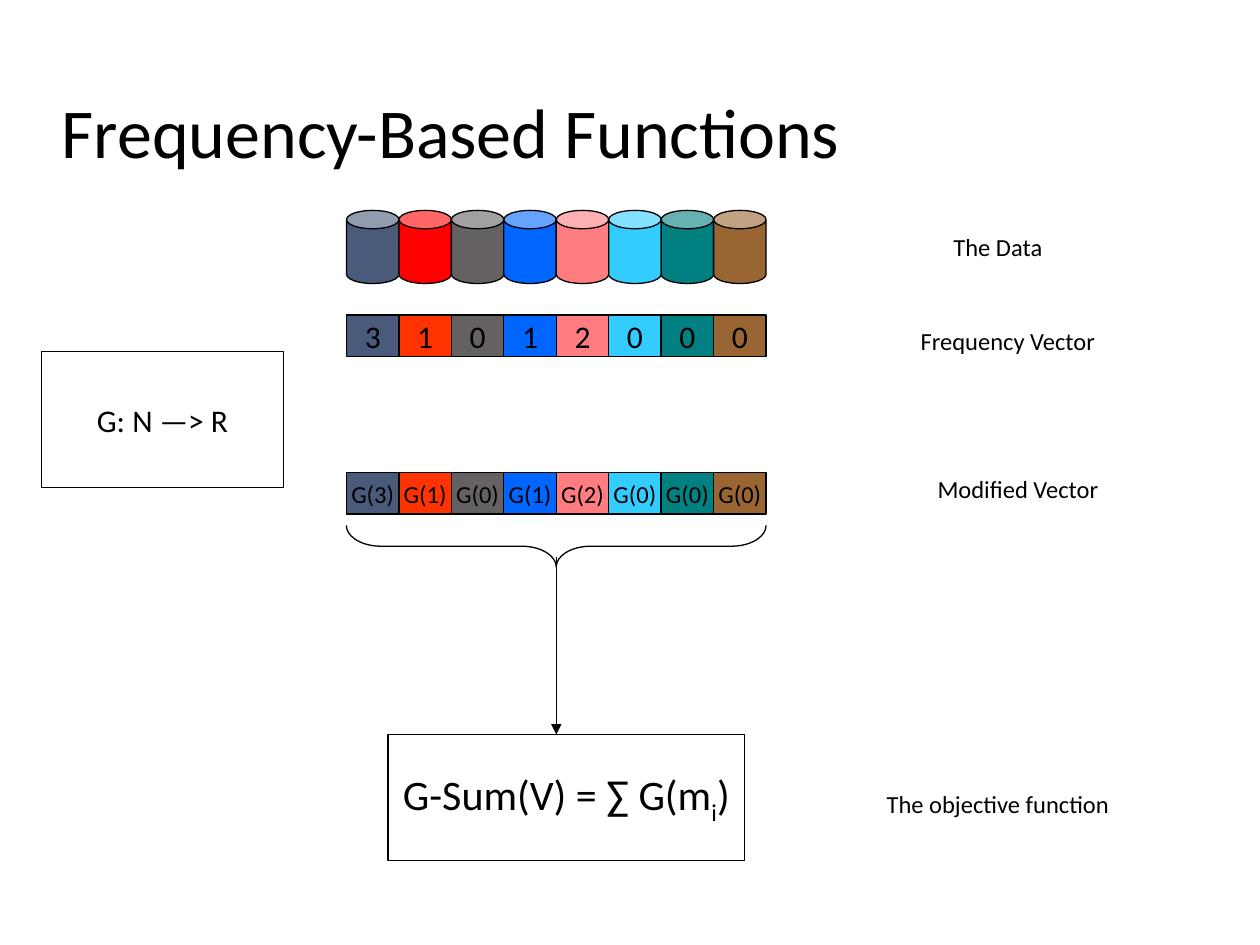
from pptx import Presentation
from pptx.dml.color import RGBColor
from pptx.enum.shapes import MSO_CONNECTOR, MSO_SHAPE
from pptx.enum.text import MSO_ANCHOR, MSO_AUTO_SIZE, PP_ALIGN
from pptx.oxml.ns import qn
from pptx.util import Inches, Pt
from lxml.etree import SubElement

FONT = "Calibri"
BLACK = RGBColor(0x00, 0x00, 0x00)
WHITE = RGBColor(0xFF, 0xFF, 0xFF)
SLATE = RGBColor(0x4A, 0x5A, 0x7A)
RED = RGBColor(0xFF, 0x00, 0x00)
ORANGE_RED = RGBColor(0xFF, 0x33, 0x00)
GRAY = RGBColor(0x65, 0x61, 0x62)
BLUE = RGBColor(0x00, 0x66, 0xFF)
PINK = RGBColor(0xFF, 0x7C, 0x80)
SKY = RGBColor(0x33, 0xCC, 0xFF)
TEAL = RGBColor(0x00, 0x80, 0x80)
BROWN = RGBColor(0x99, 0x66, 0x33)

CAN_COLORS = [SLATE, RED, GRAY, BLUE, PINK, SKY, TEAL, BROWN]
CELL_COLORS = [SLATE, ORANGE_RED, GRAY, BLUE, PINK, SKY, TEAL, BROWN]
FREQUENCIES = [3, 1, 0, 1, 2, 0, 0, 0]

ROW_LEFT = Inches(2.75)
ROW_WIDTH = Inches(3.33)


def add_span(para, text, size):
    span = para.add_run()
    span.text = text
    span.font.name = FONT
    span.font.size = Pt(size)
    span.font.color.rgb = BLACK
    return span


def add_outlined(slide, kind, left, top, width, height, fill=None, line=BLACK):
    shape = slide.shapes.add_shape(kind, left, top, width, height)
    shape.shadow.inherit = False
    if fill is None:
        shape.fill.background()
    else:
        shape.fill.solid()
        shape.fill.fore_color.rgb = fill
    shape.line.color.rgb = line
    shape.line.width = Pt(0.75)
    return shape


def add_text_box(slide, left, top, width, height, text, size, fill=None, line=BLACK):
    """Add a rectangle with centred text and return its paragraph."""
    box = add_outlined(slide, MSO_SHAPE.RECTANGLE, left, top, width, height, fill, line)
    frame = box.text_frame
    frame.word_wrap = False
    frame.vertical_anchor = MSO_ANCHOR.MIDDLE
    para = frame.paragraphs[0]
    para.alignment = PP_ALIGN.CENTER
    add_span(para, text, size)
    return para


def add_title(slide, left, top, width, height):
    title = slide.shapes.title
    title.left, title.top, title.width, title.height = left, top, width, height
    frame = title.text_frame
    frame.auto_size = MSO_AUTO_SIZE.NONE
    frame.vertical_anchor = MSO_ANCHOR.BOTTOM
    para = frame.paragraphs[0]
    para.alignment = PP_ALIGN.LEFT
    para.space_before = Pt(4)
    add_span(para, "Frequency-Based Functions", 40)


def add_can_row(slide, left, top, width, height):
    step = width / len(CAN_COLORS)
    for index, color in enumerate(CAN_COLORS):
        can = add_outlined(slide, MSO_SHAPE.CAN, round(left + index * step), top,
                           round(step), height, color)
        can.adjustments[0] = 0.35


def add_vector(slide, left, top, width, height, values, size):
    step = width / len(values)
    for index, (value, color) in enumerate(zip(values, CELL_COLORS)):
        add_text_box(slide, round(left + index * step), top, round(step), height,
                     value, size, color)


def add_labels(slide, width, height):
    for left, top, text in [
        (6.17, 1.83, "The Data"),
        (6.25, 2.58, "Frequency Vector"),
        (6.33, 3.75, "Modified Vector"),
        (6.17, 6.25, "The objective function"),
    ]:
        add_text_box(slide, Inches(left), Inches(top), width, height, text, 14, line=WHITE)


def add_objective(slide, left, top, width, height):
    para = add_text_box(slide, left, top, width, height, "G-Sum(V) = ∑ G(m", 24)
    subscript = add_span(para, "i", 24)
    subscript.font._element.set("baseline", "-25000")
    add_span(para, ")", 24)


def add_arrow(slide, x, top, bottom):
    arrow = slide.shapes.add_connector(MSO_CONNECTOR.STRAIGHT, x, top, x, bottom)
    arrow.line.color.rgb = BLACK
    arrow.line.width = Pt(0.75)
    SubElement(arrow.line._get_or_add_ln(), qn("a:tailEnd"), type="triangle")
    SubElement(arrow._element.spPr, qn("a:effectLst"))


def add_brace_below(slide, left, top, width, height):
    """Add a brace pointing down that fills the given box once turned."""
    offset = (width - height) // 2
    brace = add_outlined(slide, MSO_SHAPE.LEFT_BRACE, left + offset, top - offset,
                         height, width)
    brace.rotation = 270
    brace.adjustments[0] = 0.83
    brace.adjustments[1] = 0.5


def build_slide(deck):
    slide = deck.slides.add_slide(deck.slide_layouts[5])
    cell_height = Inches(0.33)
    add_title(slide, Inches(0.39), Inches(0.25), Inches(8.4), Inches(1.17))
    add_can_row(slide, ROW_LEFT, Inches(1.67), ROW_WIDTH, Inches(0.58))
    add_vector(slide, ROW_LEFT, Inches(2.5), ROW_WIDTH, cell_height,
               [str(count) for count in FREQUENCIES], 18)
    add_text_box(slide, Inches(0.33), Inches(2.79), Inches(1.92), Inches(1.08),
                 "G: N —> R", 18)
    add_vector(slide, ROW_LEFT, Inches(3.75), ROW_WIDTH, cell_height,
               [f"G({count})" for count in FREQUENCIES], 14)
    add_objective(slide, Inches(3.08), Inches(5.83), Inches(2.83), Inches(1))
    add_labels(slide, Inches(3.5), Inches(0.25))
    add_arrow(slide, ROW_LEFT + ROW_WIDTH // 2, Inches(4.42), Inches(5.83))
    add_brace_below(slide, ROW_LEFT, Inches(4.17), ROW_WIDTH, Inches(0.33))


def main():
    deck = Presentation()
    deck.slide_width = Inches(10)
    deck.slide_height = Inches(7.5)
    build_slide(deck)
    deck.save("out.pptx")


if __name__ == "__main__":
    main()
